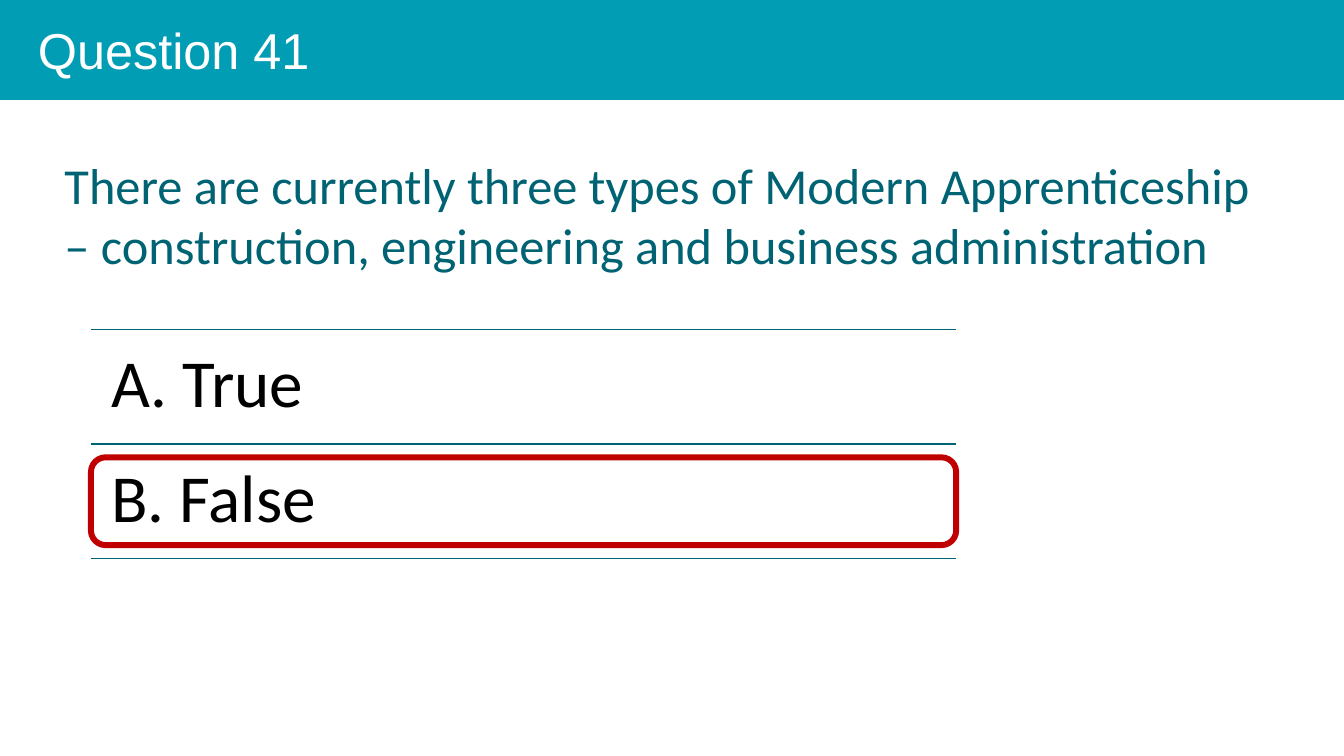
from lxml.etree import SubElement
from pptx import Presentation
from pptx.dml.color import RGBColor
from pptx.enum.shapes import MSO_CONNECTOR, MSO_SHAPE
from pptx.oxml.ns import qn
from pptx.util import Pt

COLOURS = {
    "banner": "009DB5",
    "title": "FFFFFF",
    "question": "006373",
    "answer": "000000",
    "rule": "006373",
    "highlight": "C00000",
}
PAGE_WIDTH, PAGE_HEIGHT = 960, 540
ANSWERS = ["A. True", "B. False"]
CORRECT_INDEX = 1
LIST_LEFT, LIST_TOP, LIST_WIDTH = 65, 235.5, 618
ROW_HEIGHT = 81.7
HIGHLIGHT_MARGIN = 9.5


def colour(name):
    return RGBColor.from_string(COLOURS[name])


def add_banner(page, height):
    banner = page.shapes.add_shape(MSO_SHAPE.RECTANGLE, 0, 0, Pt(PAGE_WIDTH), Pt(height))
    banner.shadow.inherit = False
    banner.fill.solid()
    banner.fill.fore_color.rgb = colour("banner")
    banner.line.fill.background()


def add_text(page, text, bounds, font_name, size, colour_name, wrap=True):
    box = page.shapes.add_textbox(*map(Pt, bounds))
    frame = box.text_frame
    frame.word_wrap = wrap
    para = frame.paragraphs[0]
    para.text = text
    para.font.name = font_name
    para.font.size = Pt(size)
    para.font.color.rgb = colour(colour_name)
    return frame


def add_rule(page, top):
    """Draw one thin horizontal line across the answer list."""
    rule = page.shapes.add_connector(
        MSO_CONNECTOR.STRAIGHT,
        Pt(LIST_LEFT), Pt(top), Pt(LIST_LEFT + LIST_WIDTH), Pt(top),
    )
    rule.line.color.rgb = colour("rule")
    rule.line.width = Pt(1)
    SubElement(rule._element.spPr, qn("a:effectLst"))


def add_answer(page, text, top):
    bounds = (LIST_LEFT, top, LIST_WIDTH, ROW_HEIGHT)
    frame = add_text(page, text, bounds, "Calibri", 48, "answer")
    frame.margin_left = frame.margin_right = Pt(14.4)
    frame.margin_top = frame.margin_bottom = Pt(14.4)
    frame.paragraphs[0].line_spacing = 0.9


def add_highlight(page, row_top):
    """Outline the correct answer's row."""
    outline = page.shapes.add_shape(
        MSO_SHAPE.ROUNDED_RECTANGLE,
        Pt(LIST_LEFT), Pt(row_top + HIGHLIGHT_MARGIN),
        Pt(LIST_WIDTH), Pt(ROW_HEIGHT - 2 * HIGHLIGHT_MARGIN),
    )
    outline.shadow.inherit = False
    outline.fill.background()
    outline.line.color.rgb = colour("highlight")
    outline.line.width = Pt(4.25)


def main():
    deck = Presentation()
    deck.slide_width, deck.slide_height = Pt(PAGE_WIDTH), Pt(PAGE_HEIGHT)
    page = deck.slides.add_slide(deck.slide_layouts[6])

    add_banner(page, 71.3)
    add_text(page, "Question 41", (20, 10, 210, 51), "Arial", 36, "title", wrap=False)
    add_text(
        page,
        "There are currently three types of Modern Apprenticeship "
        "– construction, engineering and business administration",
        (39, 106.5, 880, 94.5), "Calibri", 36, "question",
    )

    row_tops = [LIST_TOP + index * ROW_HEIGHT for index in range(len(ANSWERS) + 1)]
    for top in row_tops:
        add_rule(page, top)
    for answer, top in zip(ANSWERS, row_tops):
        add_answer(page, answer, top)
    add_highlight(page, row_tops[CORRECT_INDEX])

    deck.save("out.pptx")


if __name__ == "__main__":
    main()
